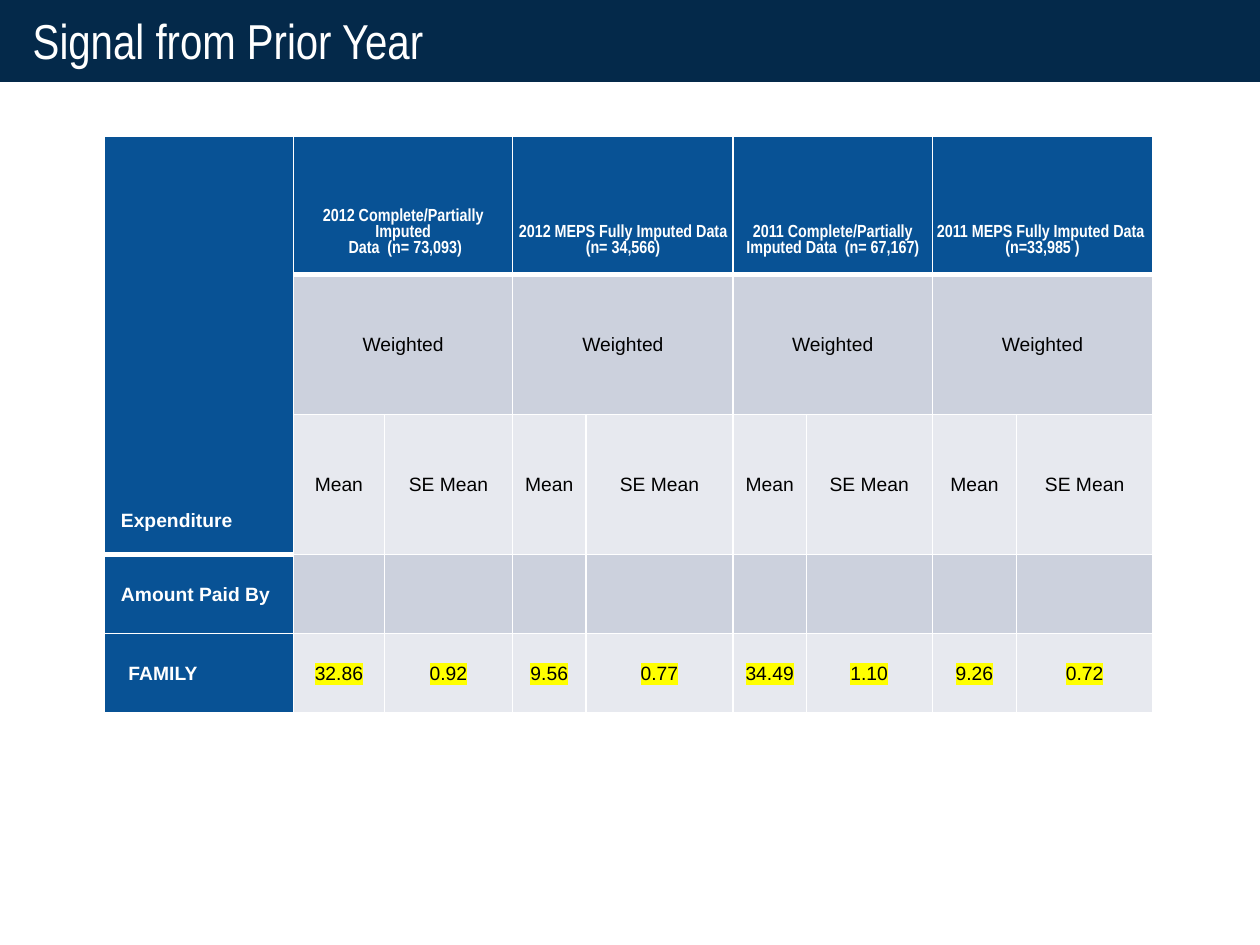
import pptx
import pptx.dml.color
import pptx.enum.text
import pptx.oxml
import pptx.oxml.ns
import pptx.util

COLOURS = {
    "navy": "04294A",
    "blue": "085295",
    "dark band": "CCD1DD",
    "light band": "E7E9EF",
    "white": "FFFFFF",
    "black": "000000",
    "yellow": "FFFF00",
}
COLUMNS = [1.5, 0.72, 1.02, 0.58, 1.17, 0.58, 1, 0.67, 1.08]
ROWS = [1.1, 1.11, 1.11, 0.63, 0.63]
GROUPS = [
    "2012 Complete/Partially Imputed\v Data  (n= 73,093)",
    "2012 MEPS Fully Imputed Data (n= 34,566)",
    "2011 Complete/Partially Imputed Data  (n= 67,167)",
    "2011 MEPS Fully Imputed Data  (n=33,985 )",
]
FAMILY = ["32.86", "0.92", "9.56", "0.77", "34.49", "1.10", "9.26", "0.72"]
ALIGN = pptx.enum.text.PP_ALIGN
ANCHOR = pptx.enum.text.MSO_ANCHOR


def rgb(name):
    """Return the named colour."""
    return pptx.dml.color.RGBColor.from_string(COLOURS[name])


def element(xml):
    """Parse a drawing element given without its namespace."""
    space = pptx.oxml.ns.nsdecls("a")
    head, rest = xml.split(" ", 1)
    return pptx.oxml.parse_xml(f"{head} {space} {rest}")


def write(frame, text, size=11, font="Arial", colour="black", bold=False,
          align=ALIGN.CENTER, indent=0, highlight=None):
    """Put one formatted paragraph into a text frame."""
    para = frame.paragraphs[0]
    para.text = text
    para.alignment = align
    para.line_spacing = 1.0
    properties = para._p.get_or_add_pPr()
    properties.set("marL", str(pptx.util.Inches(indent)))
    properties.set("indent", "0")
    for span in para.runs:
        span.font.size = pptx.util.Pt(size)
        span.font.name = font
        span.font.bold = bold
        span.font.color.rgb = rgb(colour)
        if highlight:
            mark = element(f'<a:highlight ><a:srgbClr val="{COLOURS[highlight]}"/></a:highlight>')
            span._r.rPr.find(pptx.oxml.ns.qn("a:solidFill")).addnext(mark)


def add_title(page, box):
    """Set the title placeholder as a band across the top."""
    title = page.shapes.title
    title.left, title.top, title.width, title.height = map(pptx.util.Inches, box)
    title.fill.solid()
    title.fill.fore_color.rgb = rgb("navy")
    frame = title.text_frame
    frame.word_wrap = True
    frame.auto_size = pptx.enum.text.MSO_AUTO_SIZE.NONE
    frame.vertical_anchor = ANCHOR.MIDDLE
    frame.margin_left = frame.margin_right = pptx.util.Inches(0.2)
    frame.margin_top = frame.margin_bottom = pptx.util.Inches(0.1)
    write(frame, "Signal from Prior Year", size=28, font="Arial Narrow",
          colour="white", align=ALIGN.LEFT, indent=0.06)


def style_cell(cell, row, column):
    """Give a cell its borders, fill, margins and anchor."""
    heavy_below = (row == 0) or (row == 2 and column == 0)
    heavy_above = (row == 1 and column > 0) or (row == 3 and column == 0)
    widths = {"L": 1, "R": 1, "T": 3 if heavy_above else 1, "B": 3 if heavy_below else 1}
    properties = cell._tc.get_or_add_tcPr()
    for side, points in widths.items():
        properties.append(element(
            f'<a:ln{side} w="{pptx.util.Pt(points)}"><a:solidFill>'
            f'<a:srgbClr val="{COLOURS["white"]}"/></a:solidFill></a:ln{side}>'))
    band = "dark band" if row % 2 else "light band"
    cell.fill.solid()
    cell.fill.fore_color.rgb = rgb("blue" if row == 0 or column == 0 else band)
    cell.margin_left = cell.margin_right = cell.margin_top = pptx.util.Inches(0.01)
    cell.margin_bottom = 0
    cell.vertical_anchor = ANCHOR.MIDDLE


def add_table(page, box):
    """Build the expenditure table, its columns and rows sharing the box."""
    left, top, width, height = box
    table = page.shapes.add_table(len(ROWS), len(COLUMNS),
                                  *map(pptx.util.Inches, box)).table
    for column, share in zip(table.columns, COLUMNS):
        column.width = pptx.util.Inches(width * share / sum(COLUMNS))
    for row, share in zip(table.rows, ROWS):
        row.height = pptx.util.Inches(height * share / sum(ROWS))
    for row in range(len(ROWS)):
        for column in range(len(COLUMNS)):
            style_cell(table.cell(row, column), row, column)

    table.cell(0, 0).merge(table.cell(2, 0))
    labels = [(0, "Expenditure", 0.12), (3, "Amount Paid By", 0.12), (4, "FAMILY", 0.18)]
    for row, text, indent in labels:
        write(table.cell(row, 0).text_frame, text, colour="white", bold=True,
              align=ALIGN.LEFT, indent=indent)
    table.cell(0, 0).vertical_anchor = ANCHOR.BOTTOM
    table.cell(0, 0).margin_bottom = pptx.util.Inches(0.18)

    for column, group in zip(range(1, len(COLUMNS), 2), GROUPS):
        for row in (0, 1):
            table.cell(row, column).merge(table.cell(row, column + 1))
        header = table.cell(0, column)
        header.vertical_anchor = ANCHOR.BOTTOM
        header.margin_bottom = pptx.util.Inches(0.14)
        write(header.text_frame, group, size=10, font="Arial Narrow",
              colour="white", bold=True)
        write(table.cell(1, column).text_frame, "Weighted")
        write(table.cell(2, column).text_frame, "Mean")
        write(table.cell(2, column + 1).text_frame, "SE Mean")
    for column, value in enumerate(FAMILY, start=1):
        write(table.cell(4, column).text_frame, value, highlight="yellow")


def main():
    """Build and save the deck."""
    deck = pptx.Presentation()
    deck.slide_width = pptx.util.Inches(10)
    deck.slide_height = pptx.util.Inches(7.5)
    page = deck.slides.add_slide(deck.slide_layouts[5])
    add_title(page, (0, -0.02, 10.05, 0.67))
    add_table(page, (0.83, 1.08, 8.32, 4.58))
    deck.save("out.pptx")


if __name__ == "__main__":
    main()
